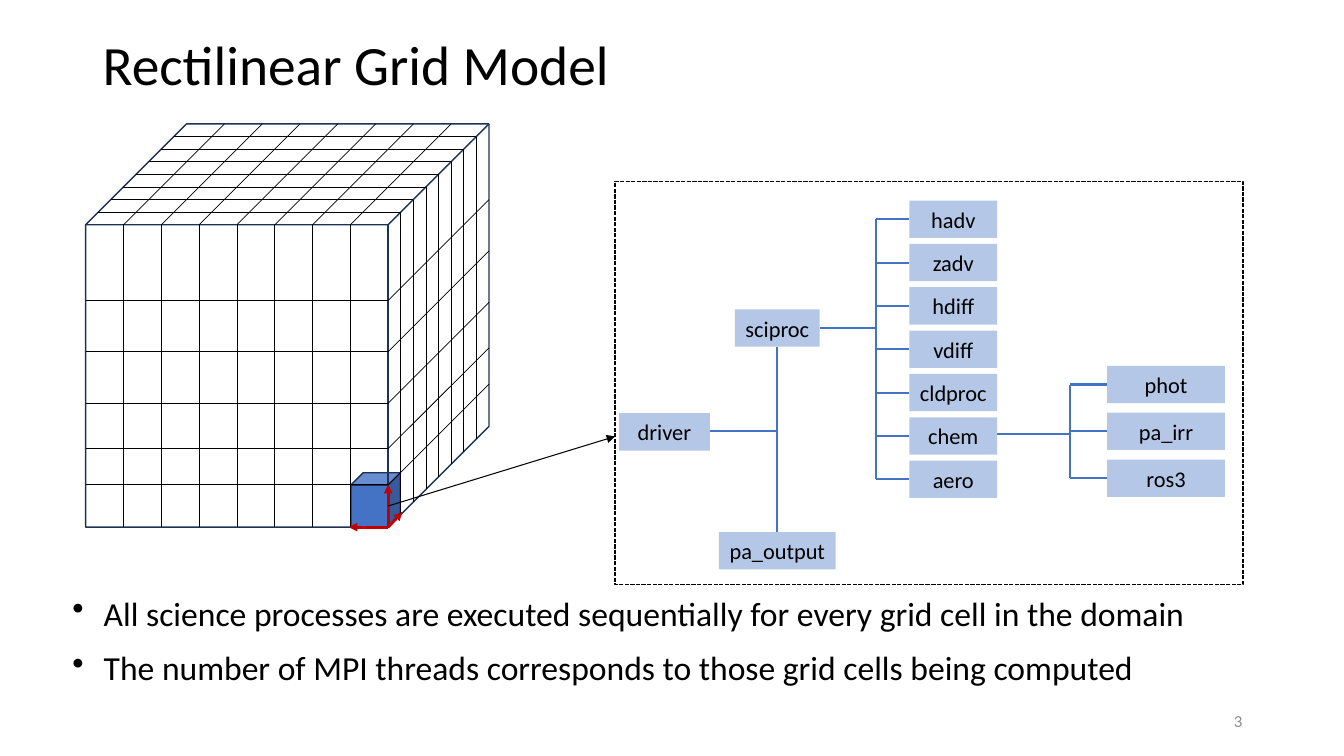
import pptx
import pptx.util
import pptx.dml.color
import pptx.enum.dml
import pptx.enum.shapes
import pptx.enum.text
import pptx.oxml
import pptx.oxml.ns

Inches = pptx.util.Inches
Pt = pptx.util.Pt
Shape = pptx.enum.shapes.MSO_SHAPE
Align = pptx.enum.text.PP_ALIGN
Anchor = pptx.enum.text.MSO_ANCHOR
qn = pptx.oxml.ns.qn
RGB = pptx.dml.color.RGBColor.from_string

COLORS = {"black": "000000", "blue": "4472C4", "edge": "1E3256",
          "box": "B4C7E7", "red": "C00000", "gray": "8C8C8C"}

deck = pptx.Presentation()
deck.slide_width, deck.slide_height = Inches(13.33), Inches(7.5)
page = deck.slides.add_slide(deck.slide_layouts[6])


def add_line(x1, y1, x2, y2, color="black", width=0.5, arrow=False):
    line = page.shapes.add_connector(
        pptx.enum.shapes.MSO_CONNECTOR.STRAIGHT,
        Inches(x1), Inches(y1), Inches(x2), Inches(y2))
    line.line.color.rgb = RGB(COLORS[color])
    line.line.width = Pt(width)
    if arrow:
        tail = pptx.oxml.parse_xml(
            f'<a:tailEnd {pptx.oxml.ns.nsdecls("a")} type="triangle"/>')
        line.line._get_or_add_ln().append(tail)
    properties = line._element.spPr
    properties.append(properties.makeelement(qn("a:effectLst"), {}))


def add_solid(kind, left, top, width, height, fill=None, edge=None, weight=1):
    solid = page.shapes.add_shape(kind, Inches(left), Inches(top), Inches(width), Inches(height))
    solid.shadow.inherit = False
    if fill:
        solid.fill.solid()
        solid.fill.fore_color.rgb = RGB(COLORS[fill])
    else:
        solid.fill.background()
    if edge:
        solid.line.color.rgb = RGB(COLORS[edge])
        solid.line.width = Pt(weight)
    else:
        solid.line.fill.background()
    return solid


# Domain cube with one highlighted cell
left, front_top, front_right, bottom, depth = 0.85, 2.23, 3.85, 5.23, 1
add_solid(Shape.CUBE, 3.48, 4.69, 0.49, 0.54, "blue", "edge")
add_solid(Shape.CUBE, left, front_top - depth, 4, 4, None, "edge")

# Grid lines: columns and depth layers are even, rows are not
for step in range(1, 8):
    x = left + 0.375 * step
    add_line(x, front_top, x, bottom)
    add_line(x, front_top, x + depth, front_top - depth)
    shift = 0.125 * step
    add_line(front_right + shift, front_top - shift, front_right + shift, bottom - shift)
    add_line(front_right + shift, front_top - shift, left + shift, front_top - shift)
for y in (2.98, 3.49, 4, 4.45, 4.81):
    add_line(front_right, y, left, y)
    add_line(front_right + depth, y - depth, front_right, y)

# Cell axes
for tip_x, tip_y in ((3.85, 4.81), (3.99, 5.08), (3.46, 5.23)):
    add_line(front_right, bottom, tip_x, tip_y, "red", 2, arrow=True)

# Process tree frame and the arrow from the cell
frame = add_solid(Shape.RECTANGLE, 6.1, 1.8, 6.23, 4, None, "black")
frame.line.dash_style = pptx.enum.dml.MSO_LINE.SQUARE_DOT
add_line(3.85, 5.02, 6.1, 4.33, "black", 0.75, arrow=True)

# Process boxes: name, left, top, width
box_height = 0.37
processes = [("driver", 6.14, 4.1, 0.9), ("sciproc", 7.29, 3.07, 0.84),
             ("pa_output", 7.13, 5.28, 1.16)]
science_names = ["hadv", "zadv", "hdiff", "vdiff", "cldproc", "chem", "aero"]
science = [(name, 9.02, 1.99 + 0.43 * row, 0.87) for row, name in enumerate(science_names)]
chemistry = [(name, 10.98, 3.63 + 0.465 * row, 1.17)
             for row, name in enumerate(["phot", "pa_irr", "ros3"])]

# Tree lines
add_line(7.04, 4.28, 7.71, 4.28, "blue", 1.5)
add_line(7.71, 3.44, 7.71, 5.28, "blue", 1.5)
add_line(8.13, 3.25, 8.69, 3.25, "blue", 1.5)
add_line(9.88, 4.31, 10.61, 4.31, "blue", 1.5)
for trunk_x, group in ((8.69, science), (10.61, chemistry)):
    centers = [top + box_height / 2 for name, box_left, top, width in group]
    add_line(trunk_x, centers[0], trunk_x, centers[-1], "blue", 1.5)
    for y in centers:
        add_line(trunk_x, y, group[0][1], y, "blue", 1.5)

for name, box_left, top, width in processes + science + chemistry:
    box = add_solid(Shape.RECTANGLE, box_left, top, width, box_height, "box")
    box.text_frame.word_wrap = False
    box.text_frame.vertical_anchor = Anchor.MIDDLE
    para = box.text_frame.paragraphs[0]
    para.text = name
    para.alignment = Align.CENTER
    para.font.size, para.font.name = Pt(16), "Calibri"
    para.font.color.rgb = RGB(COLORS["black"])

# Title, bullets and page number
bullets = ["All science processes are executed sequentially for every grid cell in the domain",
           "The number of MPI threads corresponds to those grid cells being computed"]
texts = [
    (["Rectilinear Grid Model"], 0.92, 0.36, 11.5, 0.62, 39.6, "black", Align.LEFT, Anchor.MIDDLE),
    (bullets, 0.62, 5.83, 11.71, 1.05, 24, "black", Align.LEFT, Anchor.TOP),
    (["3"], 9.42, 6.95, 3, 0.4, 12, "gray", Align.RIGHT, Anchor.MIDDLE),
]
for lines, box_left, top, width, height, size, color, align, anchor in texts:
    box = page.shapes.add_textbox(Inches(box_left), Inches(top), Inches(width), Inches(height))
    box.text_frame.word_wrap = True
    box.text_frame.vertical_anchor = anchor
    box.text_frame.text = "\n".join(lines)
    for para in box.text_frame.paragraphs:
        para.alignment = align
        para.font.size, para.font.name = Pt(size), "Calibri"
        para.font.color.rgb = RGB(COLORS[color])
        if lines is bullets:
            para.space_after = Pt(10)
            properties = para._p.get_or_add_pPr()
            properties.set("marL", str(Inches(0.31)))
            properties.set("indent", str(-Inches(0.31)))
            bullet = properties.makeelement(qn("a:buChar"), {"char": "•"})
            properties.insert_element_before(bullet, "a:tabLst", "a:defRPr", "a:extLst")
        elif size > 30:
            para.line_spacing = 0.9

deck.save("out.pptx")
